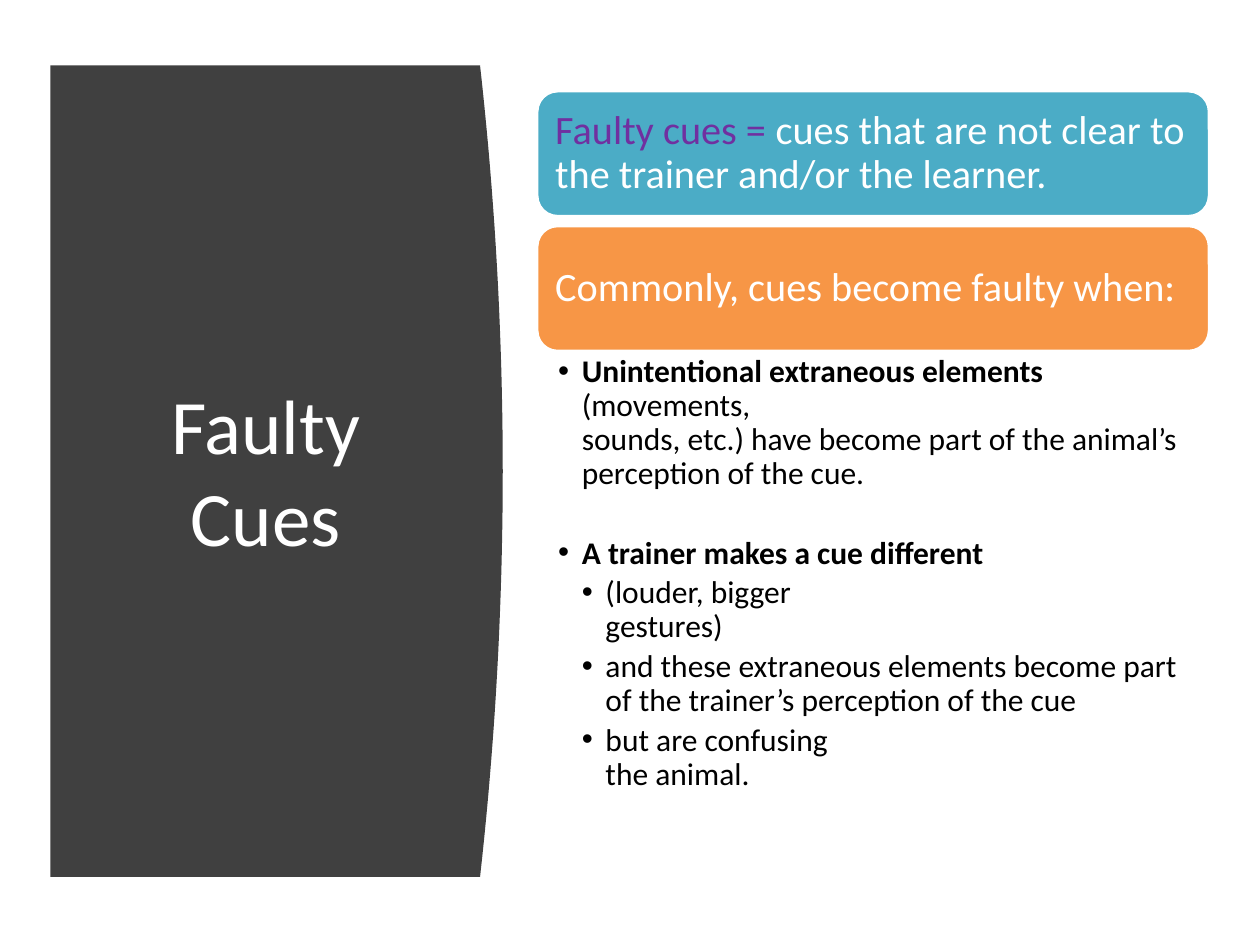
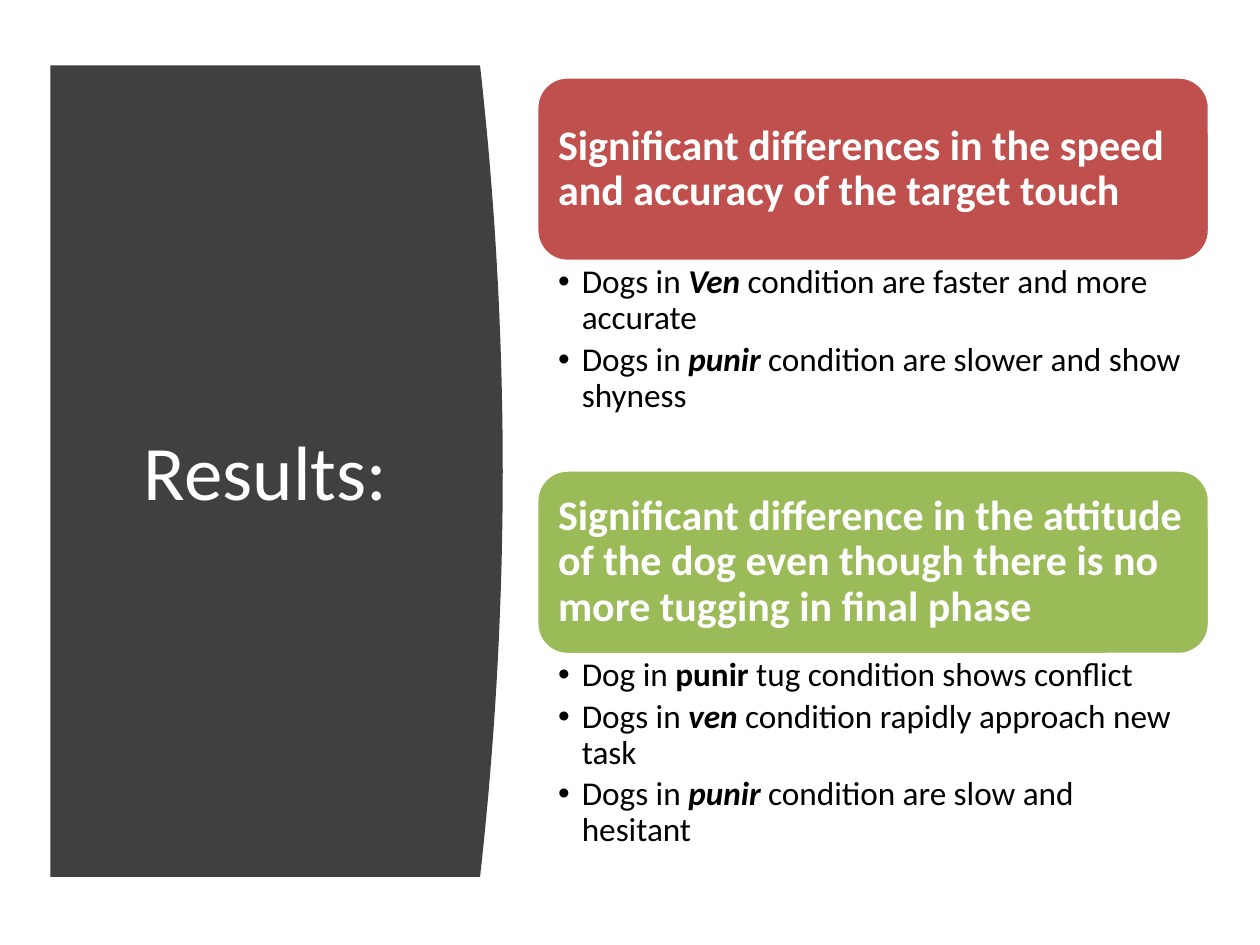
from dataclasses import dataclass

from lxml.etree import SubElement
from pptx import Presentation
from pptx.dml.color import RGBColor
from pptx.enum.shapes import MSO_SHAPE
from pptx.enum.text import MSO_ANCHOR, PP_ALIGN
from pptx.oxml.ns import qn
from pptx.util import Inches, Pt

# Shared grid: 100 columns by 75 rows
WIDTH, HEIGHT = Inches(10), Inches(7.5)
COLUMN, ROW = WIDTH / 100, HEIGHT / 75

# Shared look
FONT = "Calibri"
COLOURS = {
    "panel": "404040",
    "white": "FFFFFF",
    "black": "000000",
    "purple": "7030A0",
    "blue": "4BACC6",
    "orange": "F79646",
    "red": "C0504D",
    "green": "9BBB59",
}
PANEL_LEFT, PANEL_TOP, PANEL_BOTTOM = 4, 5.2, 69.6
PANEL_CORNER, PANEL_BULGE, PANEL_STEPS = 38.1, 1.8, 40
TITLE_BOX = (7.1, 11.1, 28, 52.4)
CONTENT_LEFT, CONTENT_WIDTH = 42.6, 53.4
HANGING = 1.88
LINE_SPACING = 0.9
BULLET_GAP = 3.2


@dataclass(frozen=True)
class Span:
    text: str
    bold: bool = False
    italic: bool = False
    colour: str = ""


@dataclass(frozen=True)
class Bullet:
    spans: tuple[Span, ...]
    level: int = 1
    space_before: float = 0


@dataclass(frozen=True)
class Card:
    fill: str
    spans: tuple[Span, ...]
    height: float
    size: float
    gap_below: float = 0


@dataclass(frozen=True)
class BulletList:
    bullets: tuple[Bullet, ...]
    height: float
    size: float
    right_inset: float
    gap_below: float = 0


@dataclass(frozen=True)
class Page:
    title: str
    top: float
    blocks: tuple[Card | BulletList, ...]


def across(columns: float) -> int:
    return round(columns * COLUMN)


def down(rows: float) -> int:
    return round(rows * ROW)


def colour(name: str) -> RGBColor:
    return RGBColor.from_string(COLOURS[name])


def set_insets(frame, left: float, top: float, right: float, bottom: float) -> None:
    frame.word_wrap = True
    frame.margin_left, frame.margin_right = across(left), across(right)
    frame.margin_top, frame.margin_bottom = down(top), down(bottom)


def add_spans(paragraph, spans: tuple[Span, ...], size: float, default: str) -> None:
    for span in spans:
        for index, line in enumerate(span.text.split("\n")):
            if index:
                paragraph.add_line_break()
            run = paragraph.add_run()
            run.text = line
            run.font.name, run.font.size = FONT, Pt(size)
            run.font.bold, run.font.italic = span.bold, span.italic
            run.font.color.rgb = colour(span.colour or default)


def add_bullet_mark(paragraph, level: int) -> None:
    properties = paragraph._p.get_or_add_pPr()
    properties.set("marL", str(across(HANGING * level)))
    properties.set("indent", str(-across(HANGING)))
    SubElement(properties, qn("a:buFont")).set("typeface", "Arial")
    SubElement(properties, qn("a:buChar")).set("char", "•")


def draw_panel(slide) -> None:
    """Dark panel whose right edge is a shallow parabola."""
    middle = (PANEL_TOP + PANEL_BOTTOM) / 2
    half = (PANEL_BOTTOM - PANEL_TOP) / 2
    edge = []
    for step in range(PANEL_STEPS + 1):
        offset = 2 * step / PANEL_STEPS - 1
        x = PANEL_CORNER + PANEL_BULGE * (1 - offset**2)
        edge.append((across(x), down(middle + half * offset)))
    builder = slide.shapes.build_freeform(across(PANEL_LEFT), down(PANEL_TOP))
    builder.add_line_segments(edge + [(across(PANEL_LEFT), down(PANEL_BOTTOM))])
    panel = builder.convert_to_shape()
    panel.shadow.inherit = False
    panel.fill.solid()
    panel.fill.fore_color.rgb = colour("panel")
    panel.line.fill.background()


def draw_title(slide, title: str) -> None:
    left, top, width, height = TITLE_BOX
    box = slide.shapes.add_textbox(across(left), down(top), across(width), down(height))
    frame = box.text_frame
    set_insets(frame, 1, 0.5, 1, 0.5)
    frame.vertical_anchor = MSO_ANCHOR.MIDDLE
    paragraph = frame.paragraphs[0]
    paragraph.alignment = PP_ALIGN.CENTER
    add_spans(paragraph, (Span(title),), 44, "white")


def draw_card(slide, card: Card, top: float) -> None:
    shape = slide.shapes.add_shape(
        MSO_SHAPE.ROUNDED_RECTANGLE,
        across(CONTENT_LEFT), down(top), across(CONTENT_WIDTH), down(card.height),
    )
    shape.shadow.inherit = False
    shape.fill.solid()
    shape.fill.fore_color.rgb = colour(card.fill)
    shape.line.color.rgb = colour("white")
    shape.line.width = Pt(2)
    frame = shape.text_frame
    set_insets(frame, 1, 1, 1, 1)
    frame.vertical_anchor = MSO_ANCHOR.MIDDLE
    paragraph = frame.paragraphs[0]
    paragraph.alignment = PP_ALIGN.LEFT
    paragraph.line_spacing = LINE_SPACING
    add_spans(paragraph, card.spans, card.size, "white")


def draw_bullets(slide, block: BulletList, top: float) -> None:
    box = slide.shapes.add_textbox(
        across(CONTENT_LEFT), down(top), across(CONTENT_WIDTH), down(block.height)
    )
    frame = box.text_frame
    set_insets(frame, 1.7, 0.3, block.right_inset, 0.3)
    for index, bullet in enumerate(block.bullets):
        paragraph = frame.add_paragraph() if index else frame.paragraphs[0]
        paragraph.level = bullet.level
        paragraph.line_spacing = LINE_SPACING
        paragraph.space_before = Pt(bullet.space_before)
        paragraph.space_after = Pt(BULLET_GAP)
        add_bullet_mark(paragraph, bullet.level)
        add_spans(paragraph, bullet.spans, block.size, "black")


def draw_page(presentation, page: Page) -> None:
    slide = presentation.slides.add_slide(presentation.slide_layouts[6])
    draw_panel(slide)
    draw_title(slide, page.title)
    top = page.top
    for block in page.blocks:
        draw = draw_card if isinstance(block, Card) else draw_bullets
        draw(slide, block, top)
        top += block.height + block.gap_below


def condition(start: str, word: str, end: str, italic: bool = True) -> Bullet:
    """Bullet with one emphasised word in the middle."""
    return Bullet((Span(start), Span(word, bold=True, italic=italic), Span(end)))


def result_card(fill: str, text: str) -> Card:
    return Card(fill, (Span(text, bold=True),), height=14.65, size=24)


def result_list(*bullets: Bullet) -> BulletList:
    return BulletList(bullets, height=16.55, size=19, right_inset=1.9)


PAGES = (
    Page("Faulty Cues", 7.2, (
        Card("blue", (
            Span("Faulty cues = ", colour="purple"),
            Span("cues that are not clear to the trainer and/or the learner."),
        ), height=10, size=23, gap_below=0.7),
        Card("orange", (Span("Commonly, cues become faulty when:"),), height=10, size=23),
        BulletList((
            Bullet((
                Span("Unintentional extraneous elements ", bold=True),
                Span("(movements,\nsounds, etc.) have become part of the animal’s\n"
                     "perception of the cue."),
            )),
            Bullet((Span("A trainer makes a cue different", bold=True),), space_before=22.8),
            Bullet((Span("(louder, bigger\ngestures)"),), level=2),
            Bullet((Span("and these extraneous elements become part\n"
                         "of the trainer’s perception of the cue"),), level=2),
            Bullet((Span("but are confusing\nthe animal."),), level=2),
        ), height=39.6, size=18, right_inset=1.8),
    )),
    Page("Results:", 6.1, (
        result_card("red", "Significant differences in the speed and accuracy "
                           "of the target touch"),
        result_list(
            condition("Dogs in ", "Ven", " condition are faster and more accurate"),
            condition("Dogs in ", "punir", " condition are slower and show shyness"),
        ),
        result_card("green", "Significant difference in the attitude of the dog "
                             "even though there is no more tugging in final phase"),
        result_list(
            condition("Dog in ", "punir", " tug condition shows conflict", italic=False),
            condition("Dogs in ", "ven", " condition rapidly approach new task"),
            condition("Dogs in ", "punir", " condition are slow and hesitant"),
        ),
    )),
)


def main() -> None:
    presentation = Presentation()
    presentation.slide_width, presentation.slide_height = WIDTH, HEIGHT
    for page in PAGES:
        draw_page(presentation, page)
    presentation.save("out.pptx")


if __name__ == "__main__":
    main()
